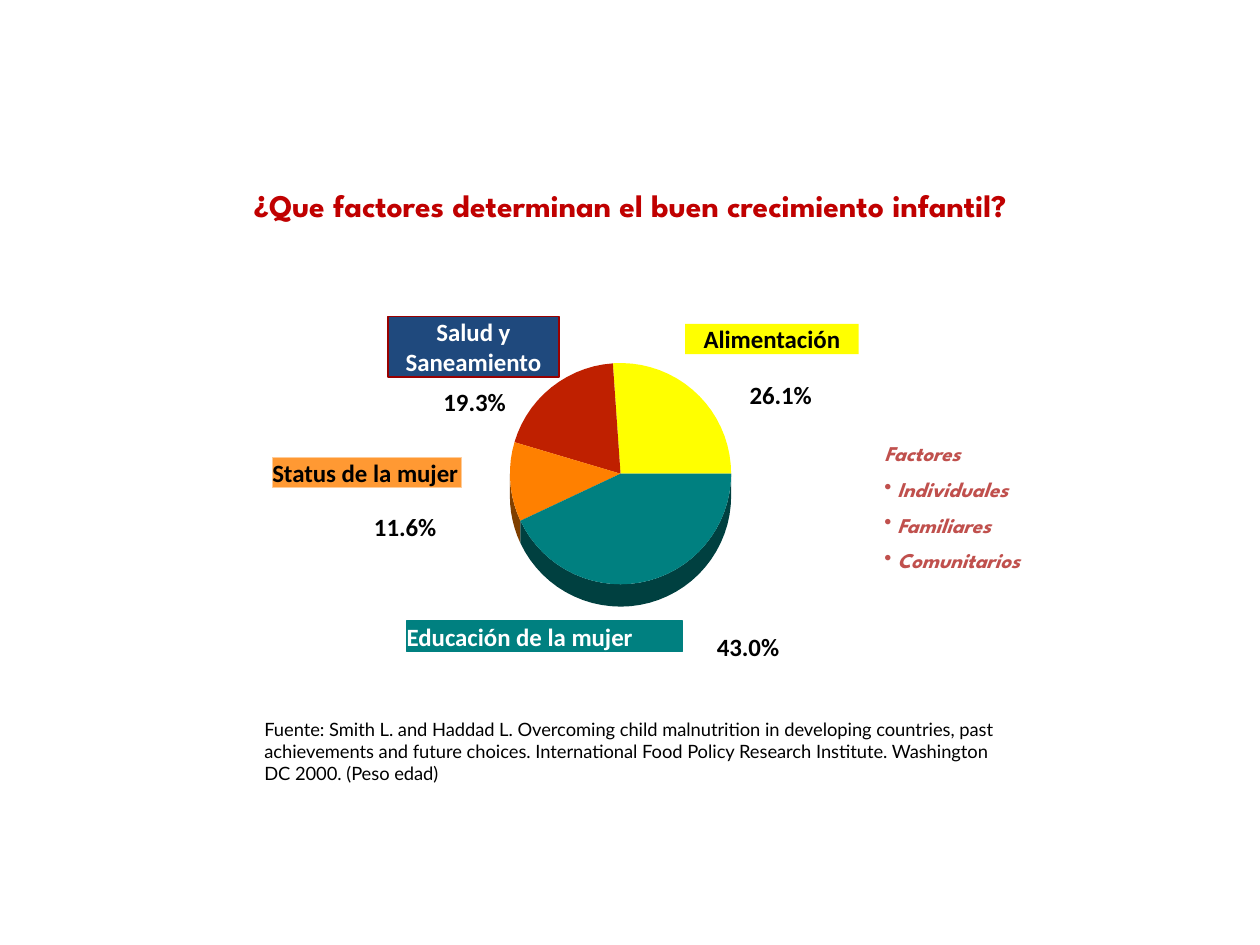
from dataclasses import dataclass
from math import ceil, cos, radians, sin
from typing import Optional

from lxml.etree import SubElement
from pptx import Presentation
from pptx.dml.color import RGBColor
from pptx.enum.shapes import MSO_SHAPE as Preset
from pptx.enum.text import PP_ALIGN as Align
from pptx.oxml.ns import qn
from pptx.util import Cm, Pt


@dataclass(frozen=True)
class Theme:
    title: str = "C00000"
    accent: str = "C0504D"
    black: str = "000000"
    white: str = "FFFFFF"
    yellow: str = "FFFF00"
    red: str = "BF2000"
    orange: str = "FF8000"
    orange_side: str = "7F3F00"
    teal: str = "008080"
    teal_side: str = "004040"
    navy: str = "1F497D"
    navy_border: str = "990000"
    amber: str = "FF9933"
    amber_border: str = "FFCC99"
    label_font: str = "Calibri"
    source_font: str = "Lato"
    display_font: str = "League Spartan"
    title_size: float = 18
    label_size: float = 14.2
    list_size: float = 12
    source_size: float = 10.5


THEME = Theme()


@dataclass(frozen=True)
class Box:
    left: float
    top: float
    width: float
    height: float


@dataclass(frozen=True)
class Factor:
    name: str
    percent: float
    color: str
    label_box: Box
    label_fill: str
    value_left: float
    value_top: float
    text_color: str = THEME.black
    align: Align = Align.LEFT
    side_color: Optional[str] = None
    border: Optional[str] = None
    wrap: bool = True


@dataclass(frozen=True)
class Pie:
    center_x: float = 12.51
    center_y: float = 9.55
    radius: float = 2.23
    depth: float = 0.45
    step: float = 5


PIE = Pie()
FACTORS = [
    Factor("Alimentación", 26.1, THEME.yellow, Box(13.81, 6.53, 3.5, 0.61),
           THEME.yellow, 15.11, 7.65, align=Align.CENTER),
    Factor("Salud y Saneamiento", 19.3, THEME.red, Box(7.82, 6.38, 3.45, 1.22),
           THEME.navy, 8.94, 7.8, THEME.white, Align.CENTER,
           border=THEME.navy_border),
    Factor("Status de la mujer", 11.6, THEME.orange, Box(5.49, 9.22, 3.81, 0.61),
           THEME.amber, 7.54, 10.31, side_color=THEME.orange_side,
           border=THEME.amber_border, wrap=False),
    Factor("Educación de la mujer", 43.0, THEME.teal, Box(8.2, 12.52, 5.56, 0.61),
           THEME.teal, 14.45, 12.73, THEME.white, side_color=THEME.teal_side,
           border=THEME.teal),
]


def paint(shape, fill: str, border: Optional[str] = None) -> None:
    shape.shadow.inherit = False
    shape.fill.solid()
    shape.fill.fore_color.rgb = RGBColor.from_string(fill)
    if border:
        shape.line.color.rgb = RGBColor.from_string(border)
        shape.line.width = Pt(0.75)
    else:
        shape.line.fill.background()


def add_text(slide, lines: list[str], box: Box, *, font: str, size: float,
             color: str, bold: bool = False, italic: bool = False,
             align: Align = Align.LEFT, wrap: bool = True, inset: bool = True,
             space_before: float = 0, bulleted: bool = False,
             fill: Optional[str] = None, border: Optional[str] = None) -> None:
    place = Cm(box.left), Cm(box.top), Cm(box.width), Cm(box.height)
    if fill:
        shape = slide.shapes.add_shape(Preset.RECTANGLE, *place)
        paint(shape, fill, border)
    else:
        shape = slide.shapes.add_textbox(*place)
    frame = shape.text_frame
    frame.word_wrap = wrap
    if not inset:
        frame.margin_left = frame.margin_right = 0
        frame.margin_top = frame.margin_bottom = 0
    for index, line in enumerate(lines):
        paragraph = frame.add_paragraph() if index else frame.paragraphs[0]
        paragraph.alignment = align
        if index:
            paragraph.space_before = Pt(space_before)
        if index and bulleted:
            properties = paragraph._p.get_or_add_pPr()
            properties.set("marL", str(Cm(0.26)))
            properties.set("indent", str(-Cm(0.26)))
            SubElement(properties, qn("a:buChar")).set("char", "•")
        run = paragraph.add_run()
        run.text = line
        run.font.name = font
        run.font.size = Pt(size)
        run.font.bold = bold
        run.font.italic = italic
        run.font.color.rgb = RGBColor.from_string(color)


def arc(start: float, end: float, drop: float = 0) -> list[tuple[int, int]]:
    count = ceil((end - start) / PIE.step)
    angles = [radians(start + (end - start) * i / count) for i in range(count + 1)]
    return [(Cm(PIE.center_x + PIE.radius * cos(angle)),
             Cm(PIE.center_y - PIE.radius * sin(angle) + drop)) for angle in angles]


def add_outline(slide, points: list[tuple[int, int]], fill: str) -> None:
    builder = slide.shapes.build_freeform(*points[0])
    builder.add_line_segments(points[1:], close=True)
    paint(builder.convert_to_shape(), fill)


def add_pie(slide) -> None:
    center = (Cm(PIE.center_x), Cm(PIE.center_y))
    slices = []
    start = 0.0
    for factor in FACTORS:
        end = start + factor.percent * 3.6
        slices.append((factor, start, end))
        start = end
    for factor, start, end in slices:
        if factor.side_color:
            front = max(start, 180)
            rim = arc(front, end) + arc(front, end, PIE.depth)[::-1]
            add_outline(slide, rim, factor.side_color)
    for factor, start, end in slices:
        add_outline(slide, [center] + arc(start, end), factor.color)


def add_labels(slide) -> None:
    style = dict(font=THEME.label_font, size=THEME.label_size, bold=True, inset=False)
    for factor in FACTORS:
        add_text(slide, [factor.name], factor.label_box, color=factor.text_color,
                 align=factor.align, wrap=factor.wrap, fill=factor.label_fill,
                 border=factor.border, **style)
        add_text(slide, [f"{factor.percent:.1f}%"],
                 Box(factor.value_left, factor.value_top, 1.27, 0.61),
                 color=THEME.black, wrap=False, **style)


def main() -> None:
    presentation = Presentation()
    presentation.slide_width = Cm(25.4)
    presentation.slide_height = Cm(19.05)
    slide = presentation.slides.add_slide(presentation.slide_layouts[6])
    add_pie(slide)
    add_labels(slide)
    add_text(slide, ["Fuente: Smith L. and Haddad L. Overcoming child malnutrition in "
                     "developing countries, past achievements and future choices. "
                     "International Food Policy Research Institute. Washington DC 2000. "
                     "(Peso edad)"],
             Box(5.08, 14.35, 15.24, 1.6), font=THEME.source_font,
             size=THEME.source_size, color=THEME.black)
    add_text(slide, ["¿Que factores determinan el buen crecimiento infantil?"],
             Box(3.63, 3.63, 18.16, 1.8), font=THEME.display_font,
             size=THEME.title_size, color=THEME.title, bold=True, align=Align.CENTER)
    add_text(slide, ["Factores", "Individuales", "Familiares", "Comunitarios"],
             Box(17.58, 8.76, 3.76, 4.37), font=THEME.display_font,
             size=THEME.list_size, color=THEME.accent, bold=True, italic=True,
             space_before=6, bulleted=True)
    presentation.save("out.pptx")


if __name__ == "__main__":
    main()
